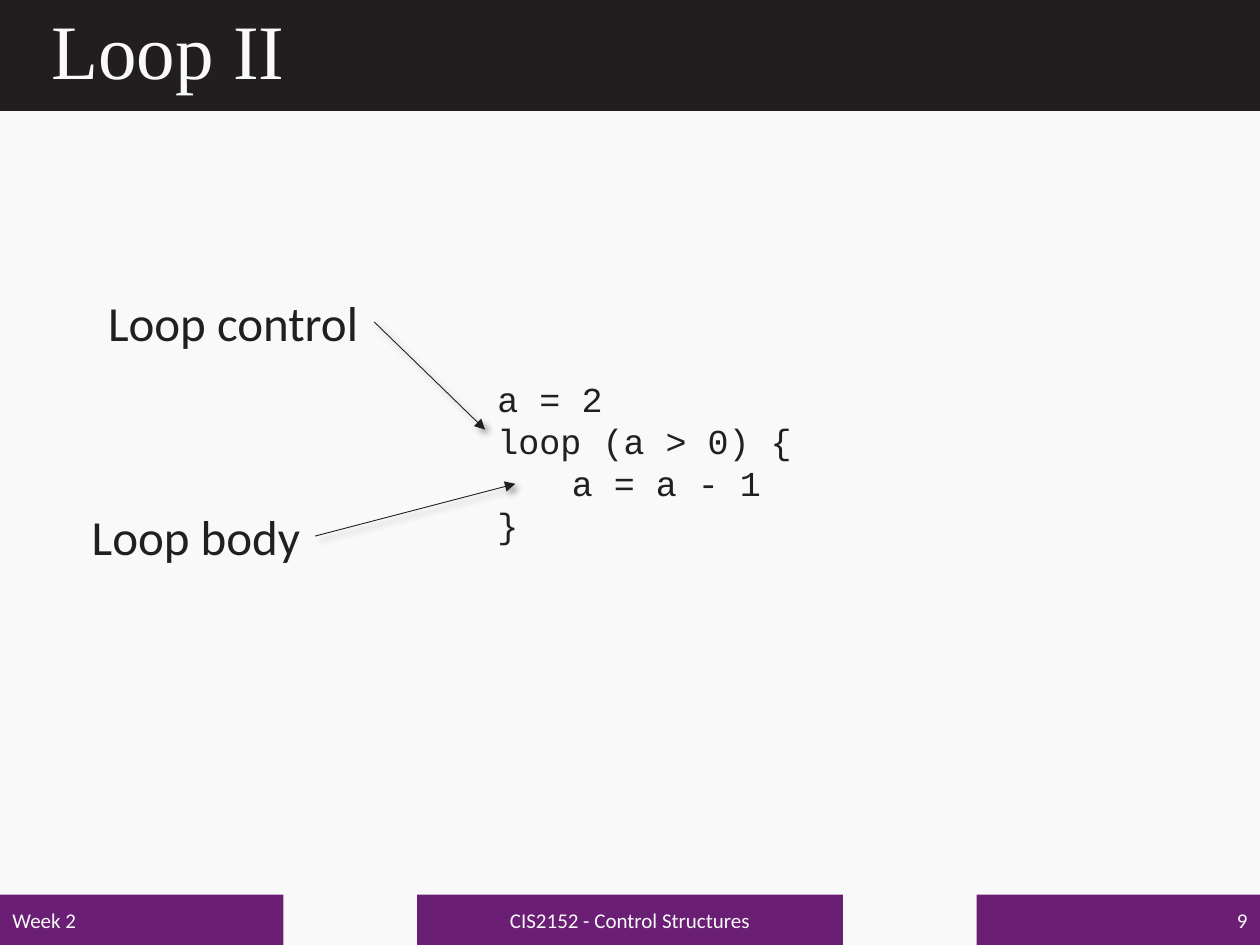
import pptx
import pptx.util
import pptx.dml.color
import pptx.enum.shapes
import pptx.enum.text
import pptx.oxml
import pptx.oxml.ns

Inches, Pt = pptx.util.Inches, pptx.util.Pt
ALIGN = pptx.enum.text.PP_ALIGN
ANCHOR = pptx.enum.text.MSO_ANCHOR
RECT = pptx.enum.shapes.MSO_SHAPE.RECTANGLE

COLORS = {"paper": "F9F9F9", "band": "221E1F", "footer": "6A1F74", "ink": "202020"}
TITLE = "Loop II"
FOOTERS = [  # text, left, width, alignment
    ("Week 2", 0, 2.25, ALIGN.LEFT),
    ("CIS2152 - Control Structures", 3.31, 3.38, ALIGN.CENTER),
    ("9", 7.75, 2.25, ALIGN.RIGHT),
]
CODE = [("a = 2", 0), ("loop (a > 0) {", 0), ("a = a - 1", 0.59), ("}", 0)]  # text, indent
LABELS = [  # text, box, arrow target
    ("Loop control", (0.76, 2.27, 2.21, 0.57), (3.85, 3.41)),
    ("Loop body", (0.63, 3.97, 1.87, 0.57), (4.09, 3.84)),
]
SHADOW = (
    '<a:effectLst %s><a:outerShdw blurRad="%d" dist="%d" dir="2700000" algn="tl" rotWithShape="0">'
    '<a:srgbClr val="000000"><a:alpha val="40000"/></a:srgbClr></a:outerShdw></a:effectLst>'
    % (pptx.oxml.ns.nsdecls("a"), Pt(4), Pt(3))
)
TAIL = '<a:tailEnd %s type="triangle"/>' % pptx.oxml.ns.nsdecls("a")


def rgb(name):
    return pptx.dml.color.RGBColor.from_string(COLORS[name])


def add_rect(slide, box, color):
    s = slide.shapes.add_shape(RECT, *map(Inches, box))
    s.shadow.inherit = False
    s.fill.solid()
    s.fill.fore_color.rgb = rgb(color)
    s.line.fill.background()
    return s


def add_text_box(slide, box, wrap=True):
    s = slide.shapes.add_textbox(*map(Inches, box))
    s.text_frame.word_wrap = wrap
    return s


def add_run(p, text, size, font, color):
    r = p.add_run()
    r.text = text
    r.font.size = Pt(size)
    r.font.name = font
    r.font.color.rgb = rgb(color)


def add_arrow(slide, label, target):
    """Arrow from the middle of the label's right side to the target point."""
    x, y = map(Inches, target)
    s = slide.shapes.add_connector(pptx.enum.shapes.MSO_CONNECTOR.STRAIGHT, 0, 0, x, y)
    s.begin_connect(label, 3)
    s.line.color.rgb = rgb("ink")
    s.line.width = Pt(0.5)
    s.line._get_or_add_ln().append(pptx.oxml.parse_xml(TAIL))
    s._element.spPr.append(pptx.oxml.parse_xml(SHADOW))


def main():
    prs = pptx.Presentation()
    prs.slide_width, prs.slide_height = Inches(10), Inches(7.5)
    slide = prs.slides.add_slide(prs.slide_layouts[6])
    slide.background.fill.solid()
    slide.background.fill.fore_color.rgb = rgb("paper")

    add_rect(slide, (0, 0, 10, 0.88), "band")
    tf = add_text_box(slide, (0.31, 0, 9.39, 0.86)).text_frame
    tf.vertical_anchor = ANCHOR.MIDDLE
    tf.paragraphs[0].line_spacing = 0.9
    add_run(tf.paragraphs[0], TITLE, 44, "Times New Roman", "paper")

    for text, left, width, align in FOOTERS:
        tf = add_rect(slide, (left, 7.1, width, 0.4), "footer").text_frame
        tf.vertical_anchor = ANCHOR.MIDDLE
        p = tf.paragraphs[0]
        p.alignment = align
        add_run(p, text, 12, "Calibri", "paper")

    tf = add_text_box(slide, (3.85, 2.95, 2.86, 1.45)).text_frame
    for i, (text, indent) in enumerate(CODE):
        p = tf.add_paragraph() if i else tf.paragraphs[0]
        if indent:
            p._p.get_or_add_pPr().set("marL", str(Inches(indent)))
        add_run(p, text, 20, "Courier New", "ink")

    for text, box, target in LABELS:
        label = add_text_box(slide, box, wrap=False)
        add_run(label.text_frame.paragraphs[0], text, 28, "Calibri", "ink")
        add_arrow(slide, label, target)

    prs.save("out.pptx")


if __name__ == "__main__":
    main()
